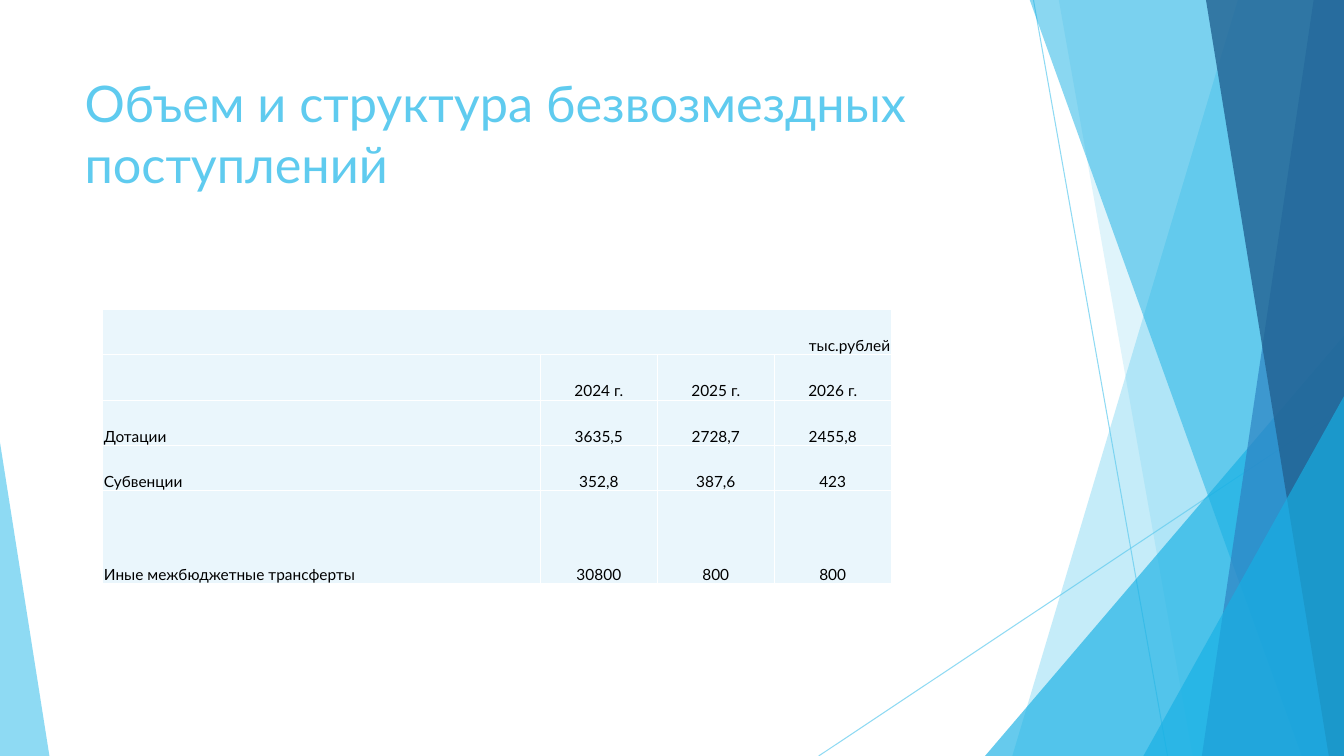
from lxml import etree
from pptx import Presentation
from pptx import util as u
from pptx.dml.color import RGBColor
from pptx.enum import shapes, text
from pptx.oxml import ns

WIDTH, HEIGHT = 13.33, 7.5
COLORS = {
    "sky": "5FCBEF",
    "cyan": "17B0E4",
    "blue": "2E83C3",
    "navy": "226292",
    "cell": "EAF6FC",
    "white": "FFFFFF",
    "black": "000000",
}
COLUMN_WIDTHS = [4.34, 1.16, 1.16, 1.16]
ROW_HEIGHTS = [0.45, 0.45, 0.45, 0.45, 0.92]
ROWS = [
    ["тыс.рублей", "", "", ""],
    ["", "2024 г.", "2025 г.", "2026 г."],
    ["Дотации", "3635,5", "2728,7", "2455,8"],
    ["Субвенции", "352,8", "387,6", "423"],
    ["Иные межбюджетные трансферты", "30800", "800", "800"],
]


class SlideBuilder:
    font = "Lato"

    def __init__(self, prs):
        self.slide = prs.slides.add_slide(prs.slide_layouts[6])
        self.shapes = self.slide.shapes

    def color(self, name):
        return RGBColor.from_string(COLORS[name])

    def set_alpha(self, fill_parent, percent):
        """Make the solid colour below the given XML element translucent."""
        clr = fill_parent.find(".//" + ns.qn("a:srgbClr"))
        etree.SubElement(clr, ns.qn("a:alpha"), val=str(percent * 1000))

    def paint(self, sp, color, alpha):
        sp.shadow.inherit = False
        sp.fill.solid()
        sp.fill.fore_color.rgb = self.color(color)
        sp.line.fill.background()
        self.set_alpha(sp._element.spPr, alpha)

    def line(self, x1, y1, x2, y2):
        cxn = self.shapes.add_connector(
            shapes.MSO_CONNECTOR.STRAIGHT, *map(u.Inches, (x1, y1, x2, y2)))
        cxn.line.width = u.Pt(0.75)
        cxn.line.color.rgb = self.color("sky")
        sp_pr = cxn._element.spPr
        self.set_alpha(sp_pr, 70)
        etree.SubElement(sp_pr, ns.qn("a:effectLst"))

    def band(self, top_x, bottom_x, color, alpha):
        """Fill from a slanted left edge to the right side of the slide."""
        top = -0.01
        corners = [(top_x, top), (WIDTH, top), (WIDTH, HEIGHT), (bottom_x, HEIGHT)]
        points = [(u.Inches(x), u.Inches(y)) for x, y in corners]
        outline = self.shapes.build_freeform(*points[0])
        outline.add_line_segments(points[1:], close=True)
        self.paint(outline.convert_to_shape(), color, alpha)

    def corner(self, left, width, height, apex, color, alpha):
        """Draw a triangle standing on the bottom edge of the slide."""
        sp = self.shapes.add_shape(
            shapes.MSO_SHAPE.ISOSCELES_TRIANGLE,
            *map(u.Inches, (left, HEIGHT - height, width, height)))
        sp.adjustments[0] = apex
        self.paint(sp, color, alpha)

    def format_text(self, p, size, color):
        p.font.size = u.Pt(size)
        for r in p.runs:
            r.font.name = self.font
            r.font.size = u.Pt(size)
            r.font.color.rgb = self.color(color)

    def title(self, content, left, top, width, height):
        box = self.shapes.add_textbox(*map(u.Inches, (left, top, width, height)))
        tf = box.text_frame
        tf.word_wrap = True
        tf.vertical_anchor = text.MSO_ANCHOR.TOP
        tf.text = content
        self.format_text(tf.paragraphs[0], 36, "sky")

    def cell(self, cell, content, align):
        cell.margin_left = cell.margin_right = cell.margin_top = u.Inches(0.01)
        cell.margin_bottom = 0
        cell.vertical_anchor = text.MSO_ANCHOR.BOTTOM
        cell.text = content
        p = cell.text_frame.paragraphs[0]
        p.alignment = align
        self.format_text(p, 11, "black")
        tc_pr = cell._tc.get_or_add_tcPr()
        for side in ("lnL", "lnR", "lnT", "lnB"):
            ln = etree.SubElement(tc_pr, ns.qn("a:" + side), w=str(u.Pt(1)))
            fill = etree.SubElement(ln, ns.qn("a:solidFill"))
            etree.SubElement(fill, ns.qn("a:srgbClr"), val=COLORS["white"])
        cell.fill.solid()
        cell.fill.fore_color.rgb = self.color("cell")

    def table(self, left, top):
        size = sum(COLUMN_WIDTHS), sum(ROW_HEIGHTS)
        table = self.shapes.add_table(
            len(ROWS), len(COLUMN_WIDTHS), *map(u.Inches, (left, top, *size))).table
        for column, width in zip(table.columns, COLUMN_WIDTHS):
            column.width = u.Inches(width)
        for row, height in zip(table.rows, ROW_HEIGHTS):
            row.height = u.Inches(height)
        for i, row in enumerate(ROWS):
            for j, content in enumerate(row):
                align = text.PP_ALIGN.CENTER if j else text.PP_ALIGN.LEFT
                if i == 0:
                    align = text.PP_ALIGN.RIGHT
                self.cell(table.cell(i, j), content, align)
        table.cell(0, 0).merge(table.cell(0, len(COLUMN_WIDTHS) - 1))


def main():
    prs = Presentation()
    prs.slide_width, prs.slide_height = u.Inches(WIDTH), u.Inches(HEIGHT)
    s = SlideBuilder(prs)

    s.line(10.25, 0, 11.58, HEIGHT)
    s.line(WIDTH, 4.03, 8.12, HEIGHT)
    s.band(12.28, 10.04, "sky", 36)
    s.band(10.5, 11.83, "sky", 20)
    s.corner(9.77, 3.56, 4.17, 1, "cyan", 66)
    s.band(10.21, 12.91, "cyan", 50)
    s.band(13.03, 11.92, "blue", 70)
    s.band(11.96, 13.18, "navy", 80)
    s.corner(11.34, 1.99, 3.57, 1, "cyan", 66)
    s.corner(0, 0.49, 3.11, 0, "sky", 70)

    s.title("Объем и структура безвозмездных поступлений", 0.74, 0.67, 9.4, 1.44)
    s.table(1.02, 3.07)
    prs.save("out.pptx")


if __name__ == "__main__":
    main()
